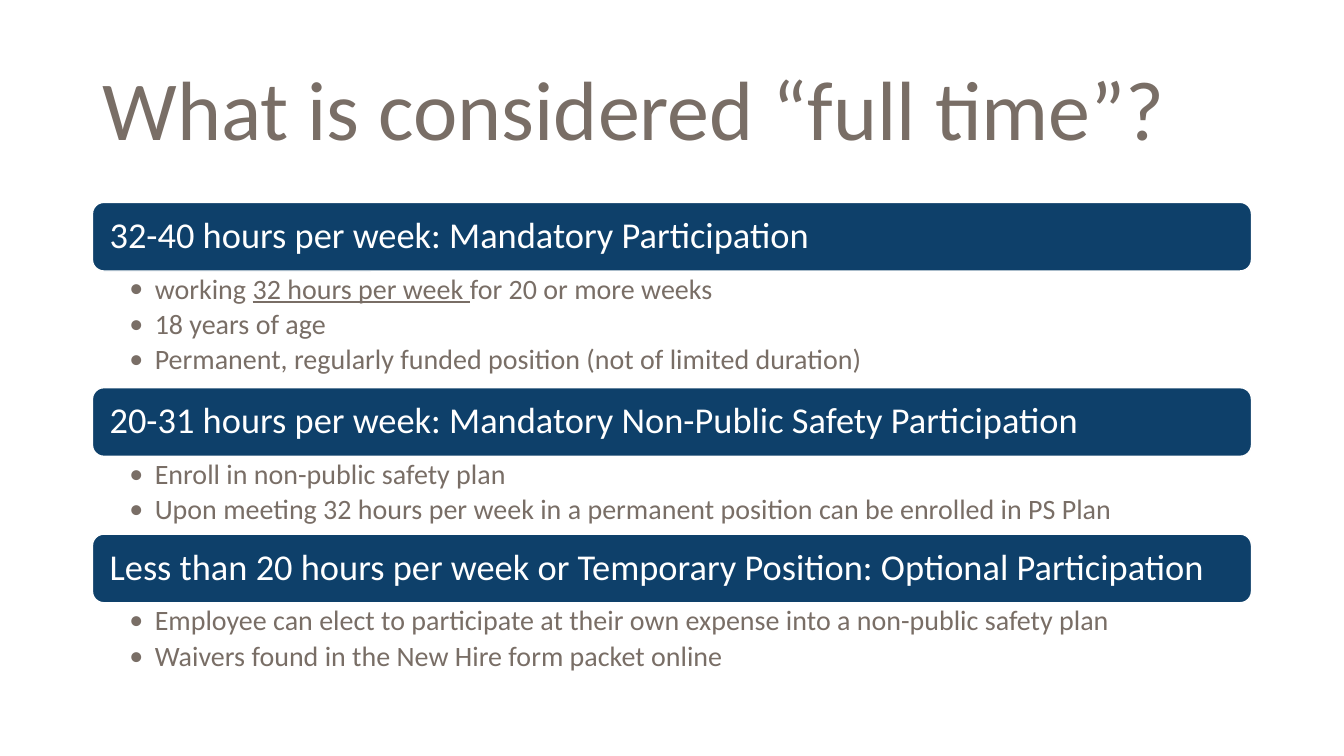
from lxml import etree
from pptx import Presentation
from pptx.dml.color import RGBColor
from pptx.enum.shapes import MSO_SHAPE
from pptx.enum.text import MSO_ANCHOR, MSO_AUTO_SIZE, PP_ALIGN
from pptx.oxml.ns import qn
from pptx.util import Cm, Pt

NAVY = RGBColor(0x0E, 0x40, 0x6A)
TAUPE = RGBColor(0x79, 0x6E, 0x66)
WHITE = RGBColor(0xFF, 0xFF, 0xFF)
ROUND = MSO_SHAPE.ROUNDED_RECTANGLE
TOP, MIDDLE = MSO_ANCHOR.TOP, MSO_ANCHOR.MIDDLE
FIXED = MSO_AUTO_SIZE.NONE
LEFT = PP_ALIGN.LEFT

EDGE, WIDE = 2.33, 29.21
START, BAR, LINE = 5.1, 1.73, 0.98

# Text between bars (|) is underlined.
GROUPS = [
    ("32-40 hours per week: Mandatory Participation",
     ["working |32 hours per week |for 20 or more weeks",
      "18 years of age",
      "Permanent, regularly funded position (not of limited duration)"]),
    ("20-31 hours per week: Mandatory Non-Public Safety Participation",
     ["Enroll in non-public safety plan",
      "Upon meeting 32 hours per week in a permanent position "
      "can be enrolled in PS Plan"]),
    ("Less than 20 hours per week or Temporary Position: Optional Participation",
     ["Employee can elect to participate at their own expense "
      "into a non-public safety plan",
      "Waivers found in the New Hire form packet online"]),
]


def place(shape, left, top, width, height):
    shape.left, shape.top = Cm(left), Cm(top)
    shape.width, shape.height = Cm(width), Cm(height)


def add_bullet(para):
    props = para._p.get_or_add_pPr()
    props.set("marL", str(Cm(0.64)))
    props.set("indent", str(-Cm(0.64)))
    etree.SubElement(props, qn("a:buFont")).set("typeface", "Calibri")
    etree.SubElement(props, qn("a:buChar")).set("char", "•")


def write(shape, lines, size, color, anchor=MIDDLE, pads=(0.25, 0.13, 0.25, 0.13),
          after=0, bullet=False):
    """Fill a shape with one paragraph per line; pads run left, top, right, bottom."""
    frame = shape.text_frame
    frame.word_wrap, frame.auto_size = True, FIXED
    frame.vertical_anchor = anchor
    (frame.margin_left, frame.margin_top,
     frame.margin_right, frame.margin_bottom) = map(Cm, pads)
    for row, line in enumerate(lines):
        para = frame.add_paragraph() if row else frame.paragraphs[0]
        if bullet:
            add_bullet(para)
        para.alignment, para.line_spacing = LEFT, 0.9
        para.space_before, para.space_after = Pt(0), Pt(after)
        for part, text in enumerate(line.split("|")):
            run = para.add_run()
            run.text = text
            font = run.font
            font.name, font.size, font.bold = "Calibri", Pt(size), False
            font.color.rgb = color
            font.underline = part % 2 == 1


def add_bar(slide, text, left, top, width, height):
    bar = slide.shapes.add_shape(ROUND, Cm(left), Cm(top), Cm(width), Cm(height))
    bar.shadow.inherit = False
    bar.fill.solid()
    bar.fill.fore_color.rgb = NAVY
    bar.line.color.rgb = WHITE
    bar.line.width = Pt(1)
    write(bar, [text], 26, WHITE, pads=(0.35, 0.1, 0.2, 0.1))


def add_group(slide, body, head, items, left, top, width):
    """Place a heading bar with its list below and return the bottom edge."""
    add_bar(slide, head, left, top, width, BAR)
    high = LINE * len(items)
    place(body, left, top + BAR, width, high)
    write(body, items, 20, TAUPE, anchor=TOP, pads=(0.93, 0.1, 0.5, 0.1),
          after=3.6, bullet=True)
    return top + BAR + high


def main():
    deck = Presentation()
    deck.slide_width, deck.slide_height = Cm(33.87), Cm(19.05)
    slide = deck.slides.add_slide(deck.slide_layouts.get_by_name("Comparison"))
    title, *bodies = slide.placeholders
    place(title, EDGE, 1.01, WIDE, 3.68)
    write(title, ["What is considered “full time”?"], 60, TAUPE)

    top = START
    for body, (head, items) in zip(bodies, GROUPS):
        top = add_group(slide, body, head, items, EDGE, top, WIDE)
    for spare in bodies[len(GROUPS):]:
        spare.element.getparent().remove(spare.element)
    deck.save("out.pptx")


if __name__ == "__main__":
    main()
